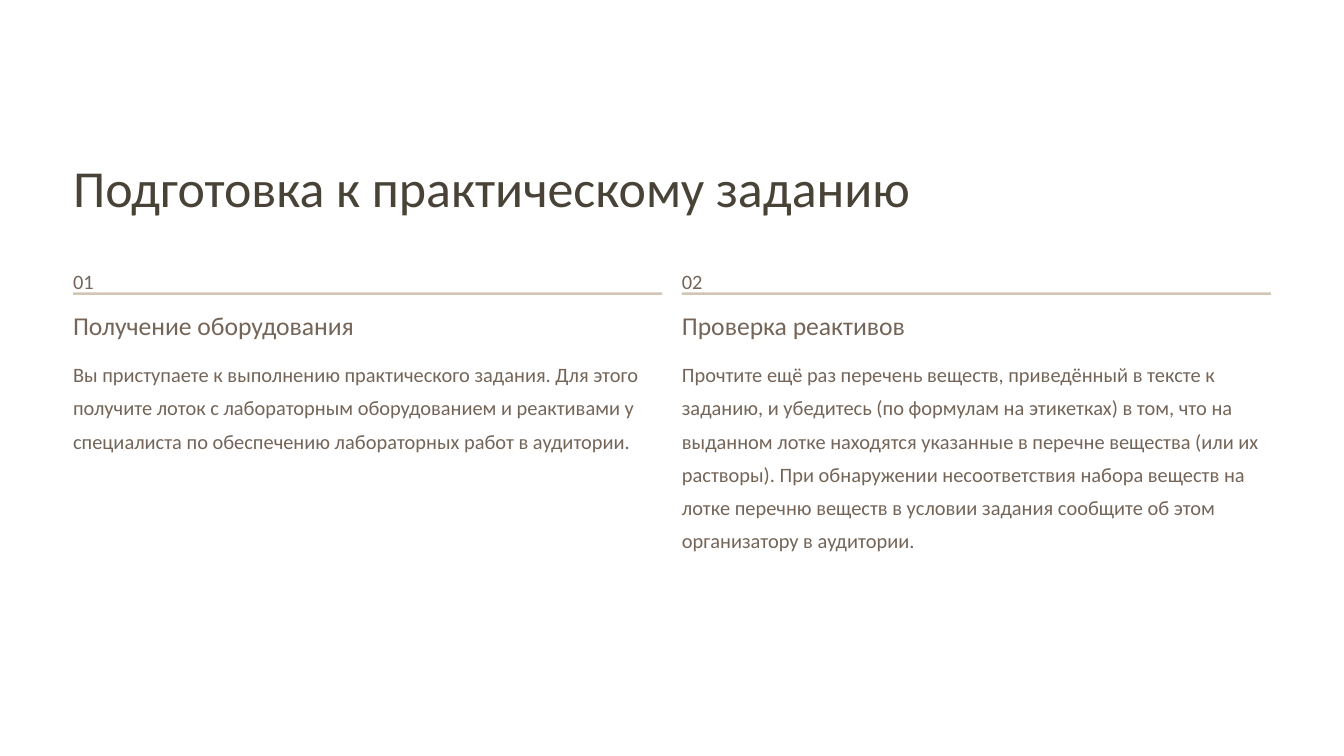
from pptx import Presentation
from pptx.dml.color import RGBColor
from pptx.enum.shapes import MSO_SHAPE
from pptx.enum.text import MSO_ANCHOR, PP_ALIGN
from pptx.util import Cm, Pt

COLORS = {"back": "FFFFFF", "title": "484237", "text": "746558", "rule": "D3C5B6"}
LEFT, STEP, WIDTH = 2.21, 18.41, 17.81

STEPS = [
    ("01", "Получение оборудования", 9.98, 4.04,
     "Вы приступаете к выполнению практического задания. Для этого получите "
     "лоток с лабораторным оборудованием и реактивами у специалиста по "
     "обеспечению лабораторных работ в аудитории."),
    ("02", "Проверка реактивов", 7.95, 7.06,
     "Прочтите ещё раз перечень веществ, приведённый в тексте к заданию, и "
     "убедитесь (по формулам на этикетках) в том, что на выданном лотке "
     "находятся указанные в перечне вещества (или их растворы). При "
     "обнаружении несоответствия набора веществ на лотке перечню веществ в "
     "условии задания сообщите об этом организатору в аудитории."),
]


class Deck:
    font = "Calibri"
    frame = {"margin_left": 0, "margin_top": 0, "margin_right": 0,
             "margin_bottom": 0, "vertical_anchor": MSO_ANCHOR.TOP}

    def __init__(self):
        self.prs = Presentation()
        self.prs.slide_width, self.prs.slide_height = Cm(40.64), Cm(22.86)
        self.slide = self.prs.slides.add_slide(self.prs.slide_layouts[6])
        fill = self.slide.background.fill
        fill.solid()
        fill.fore_color.rgb = self.color("back")

    def color(self, name):
        return RGBColor.from_string(COLORS[name])

    def apply(self, target, values):
        for name, value in values.items():
            setattr(target, name, value)

    def text(self, words, box, size, pitch, color="text", wrap=False):
        frame = self.slide.shapes.add_textbox(*map(Cm, box)).text_frame
        self.apply(frame, {**self.frame, "word_wrap": wrap})
        para = frame.paragraphs[0]
        self.apply(para, {"line_spacing": Pt(pitch), "alignment": PP_ALIGN.LEFT})
        run = para.add_run()
        run.text = words
        self.apply(run.font, {"name": self.font, "size": Pt(size)})
        run.font.color.rgb = self.color(color)

    def rule(self, box):
        bar = self.slide.shapes.add_shape(MSO_SHAPE.RECTANGLE, *map(Cm, box))
        bar.shadow.inherit = False
        bar.fill.solid()
        bar.fill.fore_color.rgb = self.color("rule")
        bar.line.fill.background()

    def save(self):
        self.prs.save("out.pptx")


def main():
    deck = Deck()
    deck.text("Подготовка к практическому заданию", (LEFT, 4.62, 29.29, 1.98),
              44.5, 55.5, "title")
    for i, (number, head, span, height, body) in enumerate(STEPS):
        x = LEFT + i * STEP
        deck.text(number, (x, 7.87, 0.64, 0.79), 17.5, 28.5)
        deck.rule((x, 8.84, WIDTH, 0.08))
        deck.text(head, (x, 9.32, span, 0.99), 22, 27.5)
        deck.text(body, (x, 10.69, WIDTH, height), 17.5, 28.5, wrap=True)
    deck.save()


if __name__ == "__main__":
    main()
